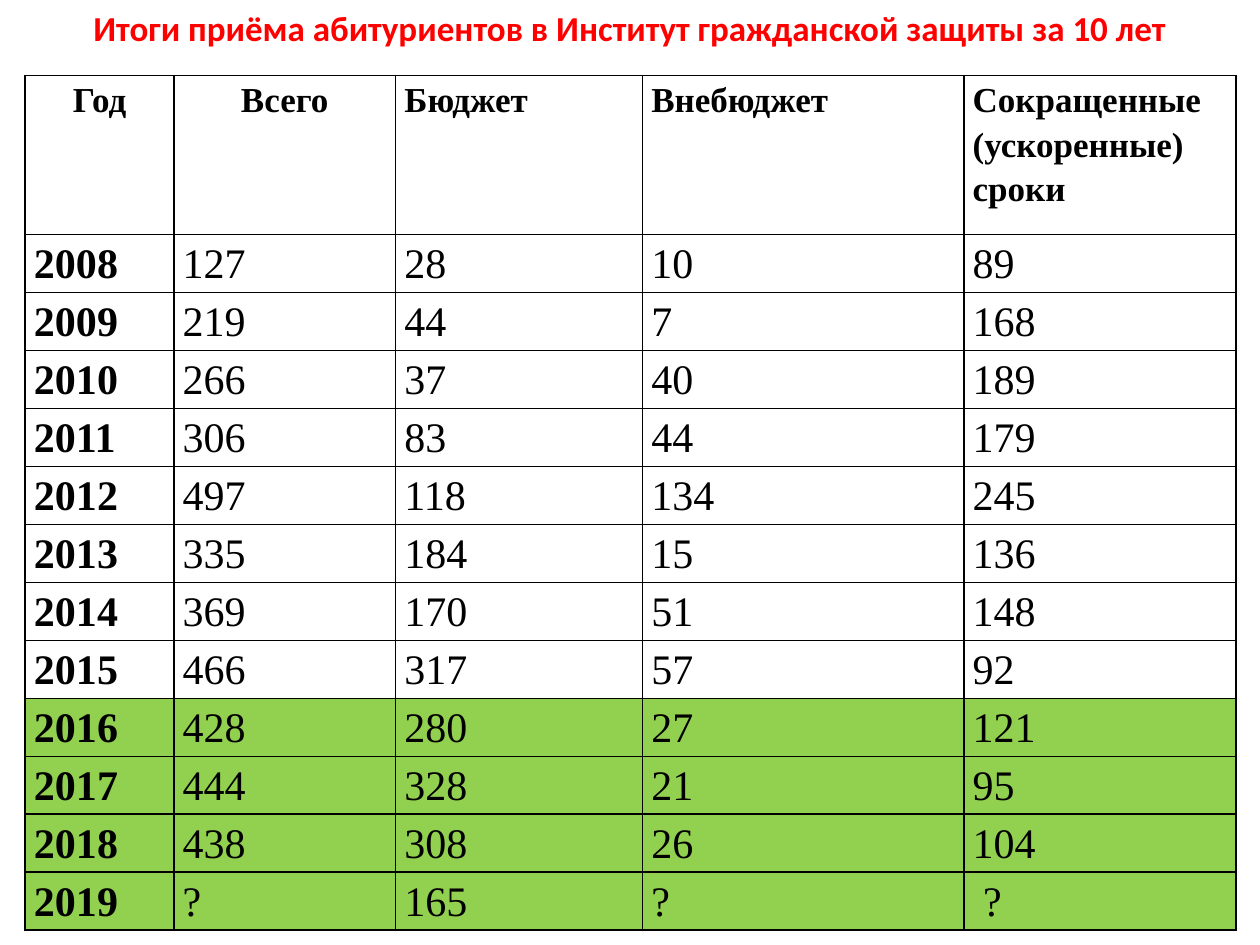
"""Build a slide with a table of yearly student admissions."""
from lxml import etree
from pptx import Presentation
from pptx import util as u
from pptx.dml.color import RGBColor
from pptx.enum import text as t
from pptx.oxml.ns import qn

TITLE = "Итоги приёма абитуриентов в Институт гражданской защиты за 10 лет"
HEAD = ("Год", "Всего", "Бюджет", "Внебюджет", "Сокращенные (ускоренные) сроки")
ROWS = [
    ("2008", "127", "28", "10", "89"),
    ("2009", "219", "44", "7", "168"),
    ("2010", "266", "37", "40", "189"),
    ("2011", "306", "83", "44", "179"),
    ("2012", "497", "118", "134", "245"),
    ("2013", "335", "184", "15", "136"),
    ("2014", "369", "170", "51", "148"),
    ("2015", "466", "317", "57", "92"),
    ("2016", "428", "280", "27", "121"),
    ("2017", "444", "328", "21", "95"),
    ("2018", "438", "308", "26", "104"),
    ("2019", "?", "165", "?", " ?"),
]
GREEN_FROM = "2016"
WIDTHS = (1.18, 1.76, 1.96, 2.55, 2.16)
HEAD_H, ROW_H = 1.26, 0.46
COLORS = {"title": "FF0000", "text": "000000", "line": "000000", "recent": "92D050"}


def write(frame, words, font="Times New Roman", size=24, color="text",
          bold=False, center=False, spacing=None):
    frame.word_wrap = True
    para = frame.paragraphs[0]
    para.alignment = t.PP_ALIGN.CENTER if center else t.PP_ALIGN.LEFT
    if spacing:
        para.line_spacing = spacing
    run = para.add_run()
    run.text = words
    run.font.name = font
    run.font.size = u.Pt(size)
    run.font.bold = bold
    run.font.color.rgb = RGBColor.from_string(COLORS[color])


def border(cell):
    props = cell._tc.get_or_add_tcPr()
    for spot, side in enumerate(("lnL", "lnR", "lnT", "lnB")):
        line = etree.Element(qn("a:" + side), w=str(u.Pt(1)))
        fill = etree.SubElement(line, qn("a:solidFill"))
        etree.SubElement(fill, qn("a:srgbClr"), val=COLORS["line"])
        props.insert(spot, line)


def main():
    deck = Presentation()
    deck.slide_width, deck.slide_height = u.Inches(10), u.Inches(7.5)
    slide = deck.slides.add_slide(deck.slide_layouts[6])

    title = slide.shapes.add_textbox(0, 0, u.Inches(10), u.Inches(0.44))
    write(title.text_frame, TITLE, font="Calibri", size=20, color="title",
          bold=True, center=True)

    height = HEAD_H + ROW_H * len(ROWS)
    table = slide.shapes.add_table(
        len(ROWS) + 1, len(HEAD), u.Inches(0.2), u.Inches(0.6),
        u.Inches(sum(WIDTHS)), u.Inches(height)).table
    table.first_row = table.horz_banding = False
    for col, width in zip(table.columns, WIDTHS):
        col.width = u.Inches(width)

    for r, row in enumerate([HEAD] + ROWS):
        head = r == 0
        table.rows[r].height = u.Inches(HEAD_H if head else ROW_H)
        for c, words in enumerate(row):
            cell = table.cell(r, c)
            cell.margin_left = cell.margin_right = u.Inches(0.07)
            cell.margin_top = cell.margin_bottom = 0
            if not head and row[0] >= GREEN_FROM:
                cell.fill.solid()
                cell.fill.fore_color.rgb = RGBColor.from_string(COLORS["recent"])
            else:
                cell.fill.background()
            border(cell)
            write(cell.text_frame, words, size=20 if head else 24,
                  bold=head or c == 0, center=head and c < 2, spacing=1.15)

    deck.save("out.pptx")


if __name__ == "__main__":
    main()
